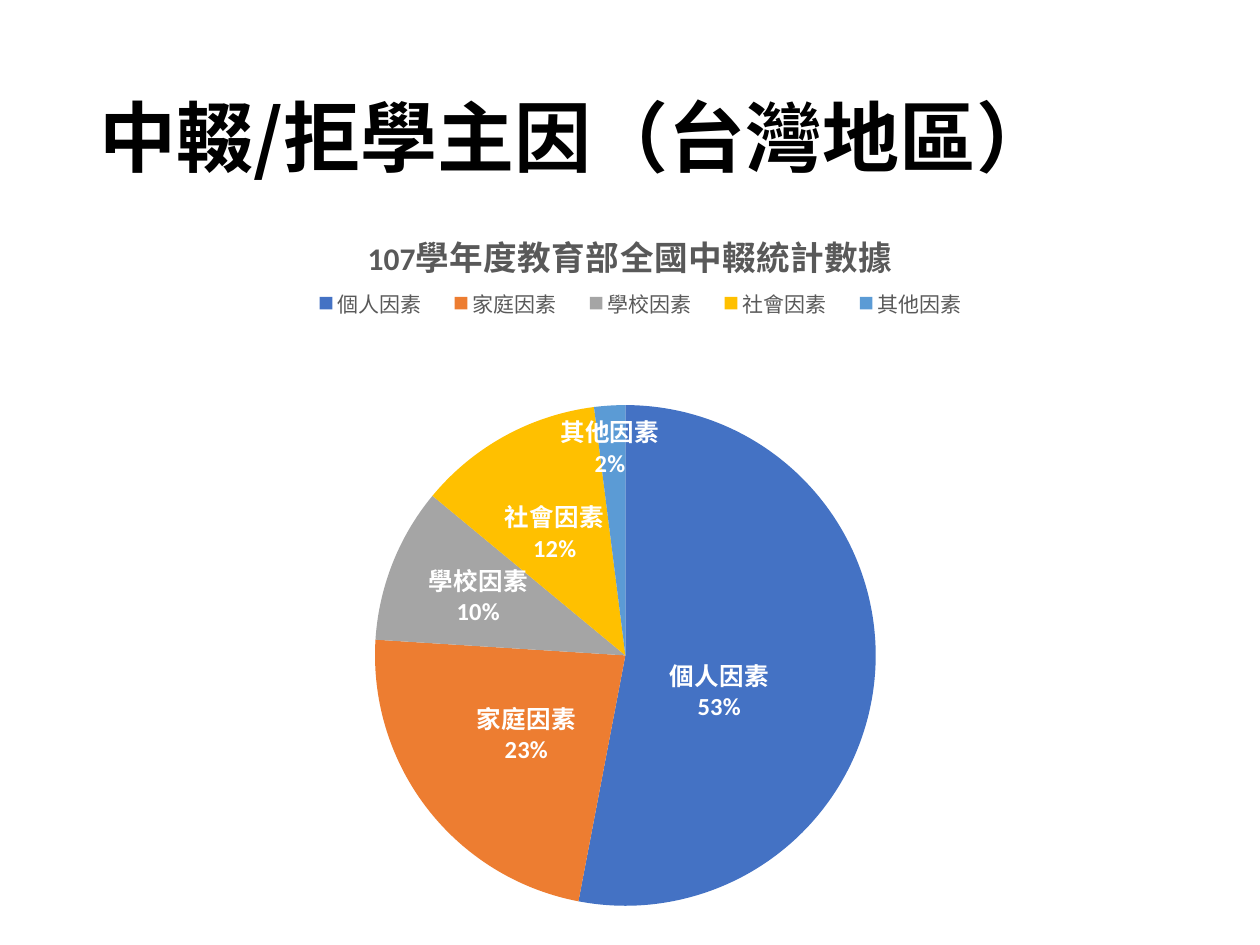
import pptx
import pptx.chart.data
import pptx.dml.color
import pptx.enum.chart
import pptx.enum.text
import pptx.oxml
import pptx.oxml.ns
import pptx.util
from pptx.util import Cm

HEADING = "中輟/拒學主因（台灣地區）"
# text, size
CHART_TITLE = [("107", 18), ("學年度教育部全國中輟統計數據", 19.2)]
CENTER = pptx.enum.chart.XL_LABEL_POSITION.CENTER
INSIDE_END = pptx.enum.chart.XL_LABEL_POSITION.INSIDE_END
# cause, percent, colour, label position, label shift as fractions of the chart
CAUSES = [
    ("個人因素", 53, "4472C4", CENTER, (-0.03, 0.03)),
    ("家庭因素", 23, "ED7D31", CENTER, None),
    ("學校因素", 10, "A5A5A5", CENTER, (-0.03, -0.02)),
    ("社會因素", 12, "FFC000", CENTER, (-0.01, -0.02)),
    ("其他因素", 2, "5B9BD5", INSIDE_END, None),
]
PLOT_AREA = {"x": 0.25, "y": 0.27, "w": 0.49, "h": 0.68}
LEGEND_AREA = {"x": 0.17, "y": 0.1, "w": 0.68, "h": 0.07}
LATIN_FONT = "Calibri"
CJK_FONT = "Noto Sans CJK SC"


def color(hex_string):
    return pptx.dml.color.RGBColor.from_string(hex_string)


def style_font(font, size, hex_string, bold=False, name=LATIN_FONT):
    font.size = pptx.util.Pt(size)
    font.bold = bold
    font.name = name
    font.color.rgb = color(hex_string)


def chart_xml(tag, content):
    return pptx.oxml.parse_xml(
        f'<c:{tag} {pptx.oxml.ns.nsdecls("c")}>{content}</c:{tag}>')


def find_part(element, tag):
    return element.find(pptx.oxml.ns.qn(f"c:{tag}"))


def manual_layout(values, prefix=""):
    sizes = "".join(f'<c:{key} val="{value}"/>' for key, value in values.items())
    return chart_xml("layout", f"<c:manualLayout>{prefix}{sizes}</c:manualLayout>")


def area_layout(area, target=""):
    """Fix an area as fractions of the chart, measured from its top left."""
    return manual_layout(area, target + '<c:xMode val="edge"/><c:yMode val="edge"/>')


def remove_layout(element):
    layout = find_part(element, "layout")
    if layout is not None:
        element.remove(layout)


def add_heading(slide):
    box = slide.shapes.add_textbox(Cm(1.75), Cm(1.02), Cm(21.9), Cm(3.68))
    frame = box.text_frame
    frame.word_wrap = True
    frame.vertical_anchor = pptx.enum.text.MSO_ANCHOR.MIDDLE
    frame.text = HEADING
    paragraph = frame.paragraphs[0]
    paragraph.line_spacing = 0.9
    run = paragraph.runs[0]
    style_font(run.font, 44, "000000", True, CJK_FONT)
    east_asian = pptx.oxml.parse_xml(
        f'<a:ea {pptx.oxml.ns.nsdecls("a")} typeface="{CJK_FONT}"/>')
    run.font._element.find(pptx.oxml.ns.qn("a:latin")).addnext(east_asian)


def add_title(chart):
    chart.has_title = True
    chart.chart_title.include_in_layout = False
    paragraph = chart.chart_title.text_frame.paragraphs[0]
    for text, size in CHART_TITLE:
        run = paragraph.add_run()
        run.text = text
        style_font(run.font, size, "595959", True)


def add_legend(chart):
    chart.has_legend = True
    legend = chart.legend
    legend.position = pptx.enum.chart.XL_LEGEND_POSITION.TOP
    legend.include_in_layout = False
    style_font(legend.font, 12, "595959")
    remove_layout(legend._element)
    find_part(legend._element, "legendPos").addnext(area_layout(LEGEND_AREA))


def label_slices(series):
    labels = series.data_labels
    for index, (_, _, fill_color, position, shift) in enumerate(CAUSES):
        point = series.points[index]
        point.format.fill.solid()
        point.format.fill.fore_color.rgb = color(fill_color)
        style_font(point.data_label.font, 14, "FFFFFF", True)
        point.data_label.position = position
        element = labels._element.findall(pptx.oxml.ns.qn("c:dLbl"))[index]
        for tag, shown in (("showLegendKey", "0"), ("showVal", "0"),
                           ("showCatName", "1"), ("showPercent", "1")):
            find_part(element, tag).set("val", shown)
        find_part(element, "showBubbleSize").addnext(chart_xml("separator", "\n"))
        if shift:
            remove_layout(element)
            find_part(element, "idx").addnext(
                manual_layout(dict(zip("xy", shift))))
    labels.show_category_name = True
    labels.show_percentage = True
    labels.show_value = False
    labels.number_format = "0%"
    labels.number_format_is_linked = False
    style_font(labels.font, 14, "FFFFFF", True)


def add_causes_chart(slide):
    data = pptx.chart.data.CategoryChartData()
    data.categories = [cause[0] for cause in CAUSES]
    data.add_series("Series 1", [cause[1] for cause in CAUSES])
    chart = slide.shapes.add_chart(
        pptx.enum.chart.XL_CHART_TYPE.PIE,
        Cm(2.41), Cm(4.09), Cm(20.6), Cm(14.96), data).chart
    style_font(chart.font, 10, "000000")
    add_title(chart)
    add_legend(chart)
    chart.plots[0].vary_by_categories = True
    label_slices(chart.plots[0].series[0])
    plot_area = chart._chartSpace.chart.plotArea
    remove_layout(plot_area)
    plot_area.insert(0, area_layout(PLOT_AREA, '<c:layoutTarget val="inner"/>'))


def main():
    presentation = pptx.Presentation()
    presentation.slide_width = Cm(25.4)
    presentation.slide_height = Cm(19.05)
    slide = presentation.slides.add_slide(presentation.slide_layouts[6])
    add_heading(slide)
    add_causes_chart(slide)
    presentation.save("out.pptx")


if __name__ == "__main__":
    main()
